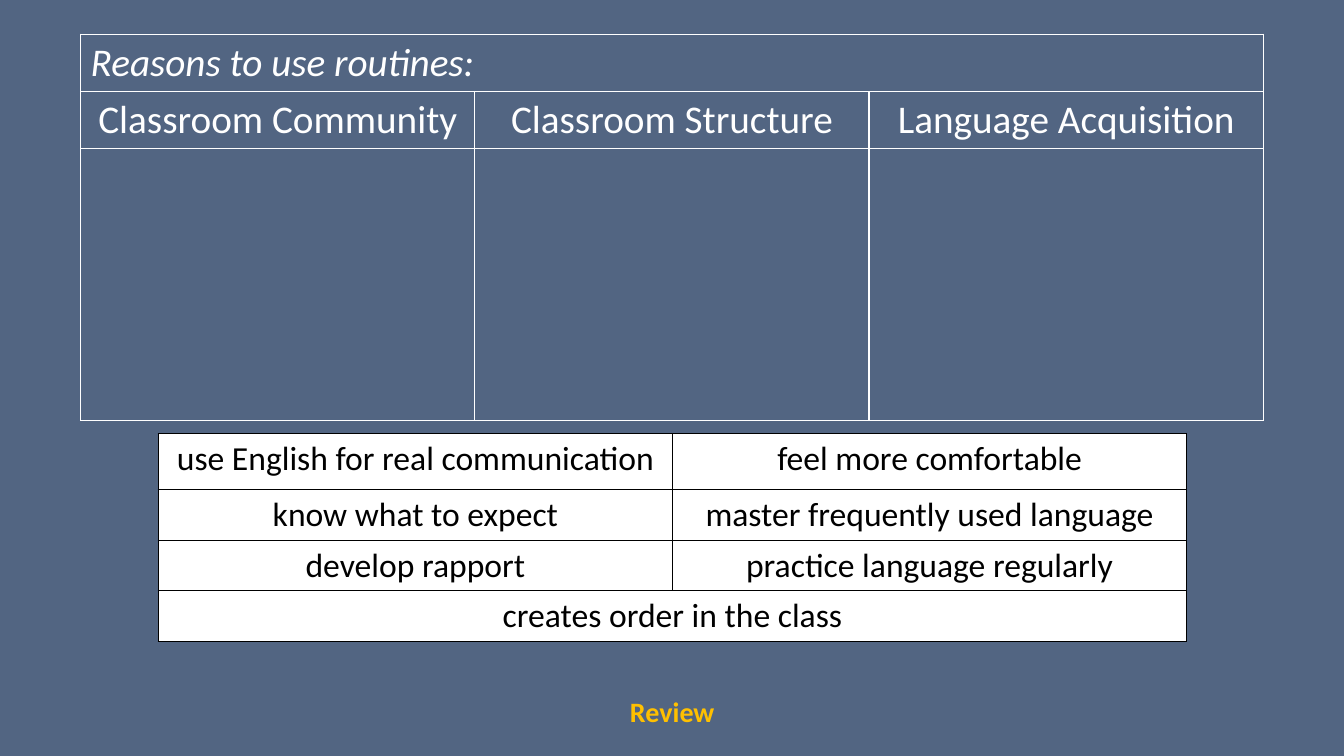
from lxml import etree
from pptx import Presentation
from pptx.dml.color import RGBColor
from pptx.enum.text import PP_ALIGN as Align
from pptx.oxml.ns import qn
from pptx.util import Inches, Pt

SLATE = RGBColor(0x52, 0x65, 0x82)
WHITE = RGBColor(0xFF, 0xFF, 0xFF)
BLACK = RGBColor(0x00, 0x00, 0x00)
GOLD = RGBColor(0xFF, 0xC0, 0x00)

REASONS = [
    ["Reasons to use routines:", "", ""],
    ["Classroom Community", "Classroom Structure", "Language Acquisition"],
    ["", "", ""],
]
CHOICES = [
    ["use English for real communication", "feel more comfortable"],
    ["know what to expect", "master frequently used language"],
    ["develop rapport", "practice language regularly"],
    ["creates order in the class", ""],
]


def write(para, text, color, **formats):
    """Put one formatted span of text in a paragraph."""
    span = para.add_run()
    span.text = text
    span.font.color.rgb = color
    for name, value in {"name": "Calibri", **formats}.items():
        setattr(span.font, name, value)


def draw_borders(cell, color):
    properties = cell._tc.get_or_add_tcPr()
    for position, side in enumerate(("lnL", "lnR", "lnT", "lnB")):
        line = etree.Element(qn(f"a:{side}"), w=str(Pt(1)))
        fill = etree.SubElement(line, qn("a:solidFill"))
        etree.SubElement(fill, qn("a:srgbClr"), val=str(color))
        properties.insert(position, line)


def add_grid(page, rows, left, top, column_width, row_heights, merged_row,
             size, color, fill=None):
    """Add a bordered table in which one row is a single wide cell."""
    columns = len(rows[0])
    table = page.shapes.add_table(
        len(rows), columns, Inches(left), Inches(top),
        Inches(column_width * columns), Inches(sum(row_heights))).table
    table.first_row = table.horz_banding = False
    for column in table.columns:
        column.width = Inches(column_width)
    for row, height in zip(table.rows, row_heights):
        row.height = Inches(height)
    for row_index, texts in enumerate(rows):
        for column_index, text in enumerate(texts):
            cell = table.cell(row_index, column_index)
            if fill is None:
                cell.fill.background()
            else:
                cell.fill.solid()
                cell.fill.fore_color.rgb = fill
            draw_borders(cell, color)
            if text:
                para = cell.text_frame.paragraphs[0]
                para.alignment = Align.CENTER
                write(para, text, color, size=Pt(size))
    table.cell(merged_row, 0).merge(table.cell(merged_row, columns - 1))
    return table


def add_label(page, text):
    box = page.shapes.add_textbox(
        Inches(6.15), Inches(6.88), Inches(1.13), Inches(0.42))
    box.text_frame.word_wrap = True
    para = box.text_frame.paragraphs[0]
    para.line_spacing = 0.9
    write(para, text, GOLD, size=Pt(20), bold=True)


def main():
    deck = Presentation()
    deck.slide_width, deck.slide_height = Inches(13.33), Inches(7.5)
    page = deck.slides.add_slide(deck.slide_layouts[6])
    page.background.fill.solid()
    page.background.fill.fore_color.rgb = SLATE

    add_label(page, "Review")
    reasons = add_grid(page, REASONS, 0.8, 0.34, 3.91, [0.55, 0.55, 2.7],
                       merged_row=0, size=28, color=WHITE)
    heading = reasons.cell(0, 0).text_frame.paragraphs[0]
    heading.alignment = Align.LEFT
    heading.runs[0].font.italic = True
    add_grid(page, CHOICES, 1.57, 4.3, 5.1, [0.56, 0.5, 0.5, 0.5],
             merged_row=3, size=24, color=BLACK, fill=WHITE)
    deck.save("out.pptx")


if __name__ == "__main__":
    main()
